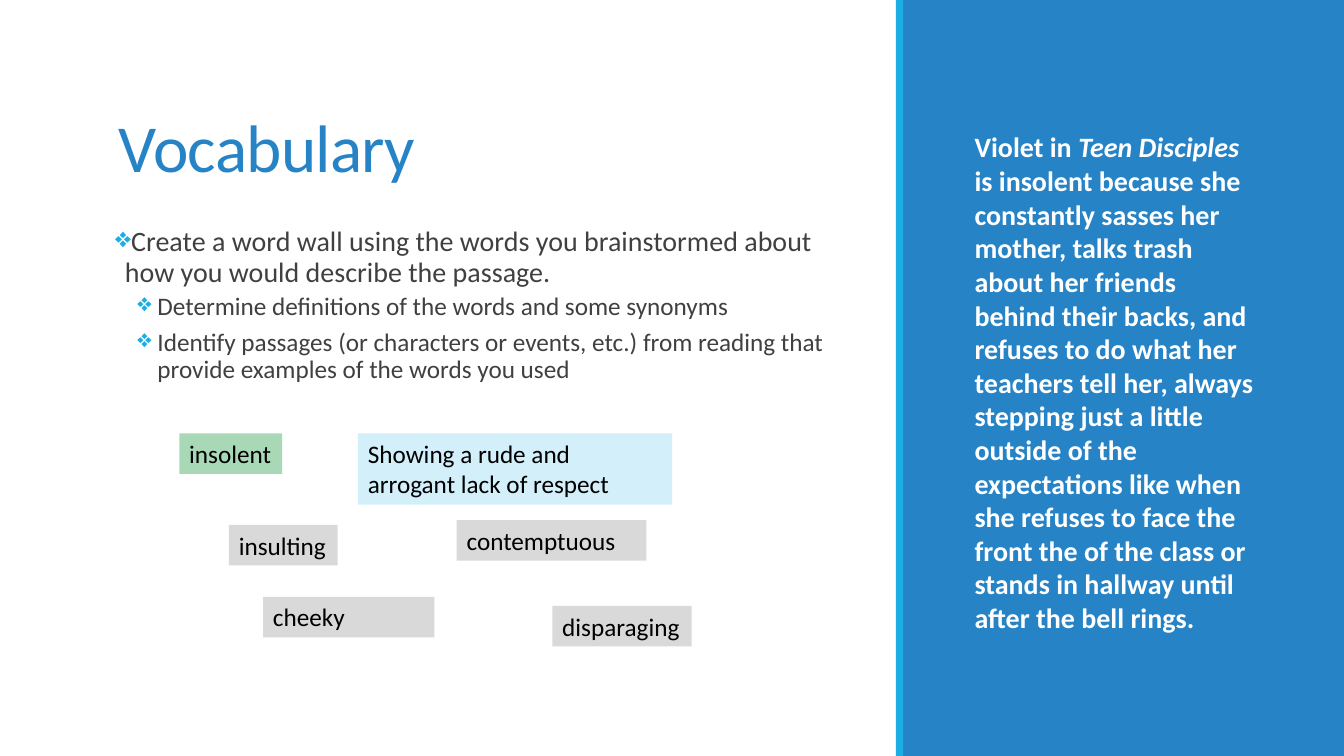
from lxml.etree import SubElement
from pptx import Presentation
from pptx.dml.color import RGBColor
from pptx.enum.shapes import MSO_SHAPE
from pptx.enum.text import MSO_ANCHOR, MSO_AUTO_SIZE
from pptx.oxml.ns import qn
from pptx.util import Cm, Pt


def rgb(value):
    return RGBColor.from_string(value)


def add_run(p, text, size, color, **formats):
    r = p.add_run()
    r.text = text
    r.font.color.rgb = rgb(color)
    for name, value in {"name": "Calibri", "size": Pt(size), **formats}.items():
        setattr(r.font, name, value)
    return r


prs = Presentation()
prs.slide_width, prs.slide_height = Cm(33.87), Cm(19.05)
s = prs.slides.add_slide(prs.slide_layouts[6])

# Side panel and its accent stripe
for left, width, color in [(22.63, 11.24, "2683C6"), (22.58, 0.18, "1CADE4")]:
    sp = s.shapes.add_shape(MSO_SHAPE.RECTANGLE, Cm(left), 0, Cm(width), prs.slide_height)
    sp.shadow.inherit = False
    sp.fill.solid()
    sp.fill.fore_color.rgb = rgb(color)
    sp.line.fill.background()

# Title
tf = s.shapes.add_textbox(Cm(2.74), Cm(0.79), Cm(18.75), Cm(4.04)).text_frame
tf.word_wrap = True
tf.vertical_anchor = MSO_ANCHOR.BOTTOM
p = tf.paragraphs[0]
p.line_spacing = 0.85
r = add_run(p, "Vocabulary", 48, "2683C6")
r.font._element.set("spc", "-50")

# Instructions: level, text
instructions = [
    (0, "Create a word wall using the words you brainstormed about how you would describe the passage."),
    (1, "Determine definitions of the words and some synonyms"),
    (1, "Identify passages (or characters or events, etc.) from reading that provide examples of the words you used"),
]
# Per level: left margin, hanging indent, space before, space after, size
levels = [(0.25, 0.25, 0, 2, 20), (1.07, 0.51, 2, 4, 18)]
tf = s.shapes.add_textbox(Cm(2.9), Cm(5.61), Cm(18.59), Cm(10.69)).text_frame
tf.word_wrap = True
tf.margin_left = tf.margin_right = 0
for i, (level, text) in enumerate(instructions):
    margin, hanging, before, after, size = levels[level]
    p = tf.add_paragraph() if i else tf.paragraphs[0]
    formats = {"level": level, "line_spacing": 0.9,
               "space_before": Pt(before), "space_after": Pt(after)}
    for name, value in formats.items():
        setattr(p, name, value)
    pPr = p._p.get_or_add_pPr()
    pPr.set("marL", str(Cm(margin)))
    pPr.set("indent", str(-Cm(hanging)))
    SubElement(SubElement(pPr, qn("a:buClr")), qn("a:srgbClr"), val="1CADE4")
    SubElement(pPr, qn("a:buChar"), char="❖")
    add_run(p, text, size, "404040")

# Word wall: text, left, top, width, height, fill, wrap
cards = [
    ("insolent", 4.52, 10.92, 2.59, 1.02, "A9D8B7", False),
    ("Showing a rude and arrogant lack of respect", 9.02, 10.92, 7.92, 1.8, "D2EFFA", True),
    ("cheeky", 6.63, 15.04, 4.32, 1.02, "D9D9D9", True),
    ("insulting", 5.77, 13.23, 2.74, 1.02, "D9D9D9", False),
    ("contemptuous", 11.51, 13.11, 4.78, 1.02, "D9D9D9", True),
    ("disparaging", 13.92, 15.27, 3.51, 1.02, "D9D9D9", False),
]
for text, left, top, width, height, color, wrap in cards:
    sp = s.shapes.add_textbox(Cm(left), Cm(top), Cm(width), Cm(height))
    sp.fill.solid()
    sp.fill.fore_color.rgb = rgb(color)
    tf = sp.text_frame
    tf.word_wrap = wrap
    tf.auto_size = MSO_AUTO_SIZE.SHAPE_TO_FIT_TEXT
    add_run(tf.paragraphs[0], text, 18, "000000")

# Example in the side panel: text, italic
example = [
    ("Violet in ", False),
    ("Teen Disciples ", True),
    ("is insolent because she constantly sasses her mother, talks trash about her friends "
     "behind their backs, and refuses to do what her teachers tell her, always stepping just "
     "a little outside of the expectations like when she refuses to face the front the of the "
     "class or stands in hallway until after the bell rings.", False),
]
tf = s.shapes.add_textbox(Cm(24.31), Cm(3.15), Cm(7.57), Cm(13.08)).text_frame
tf.word_wrap = True
tf.auto_size = MSO_AUTO_SIZE.SHAPE_TO_FIT_TEXT
for text, italic in example:
    add_run(tf.paragraphs[0], text, 20, "FFFFFF", bold=True, italic=italic)

prs.save("out.pptx")
